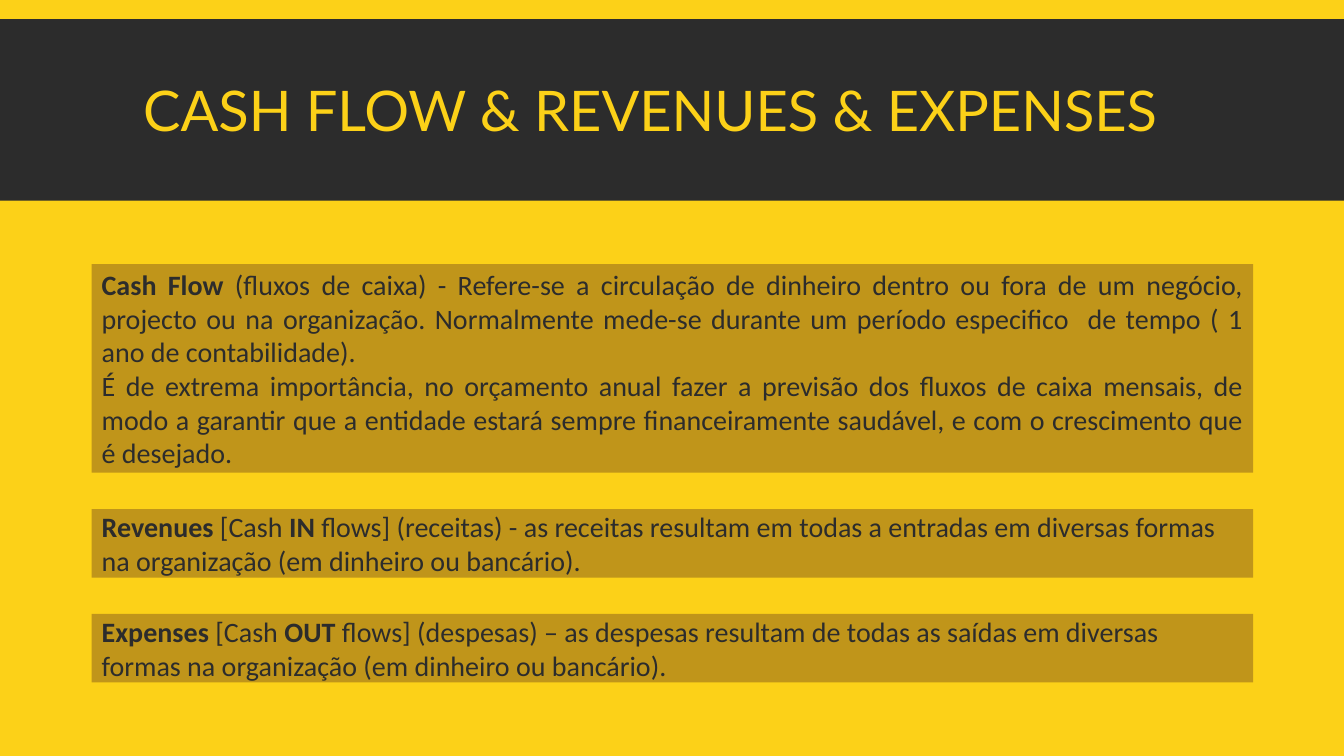
from pptx import Presentation
from pptx.dml.color import RGBColor
from pptx.enum.shapes import MSO_SHAPE as Shape
from pptx.enum.text import MSO_ANCHOR as Anchor, MSO_AUTO_SIZE as AutoSize, PP_ALIGN as Align
from pptx.util import Inches, Pt

YELLOW = RGBColor(0xFC, 0xD1, 0x18)
DARK = RGBColor(0x2C, 0x2C, 0x2C)
OCHRE = RGBColor(0xC0, 0x95, 0x1A)


def add_box(slide, left, top, width, height, color):
    shape = slide.shapes.add_shape(
        Shape.RECTANGLE, Inches(left), Inches(top), Inches(width), Inches(height))
    shape.shadow.inherit = False
    shape.fill.solid()
    shape.fill.fore_color.rgb = color
    shape.line.fill.background()
    return shape


def add_run(paragraph, text, font_name, size, color, bold=False):
    run = paragraph.add_run()
    run.text = text
    run.font.name = font_name
    run.font.size = Pt(size)
    run.font.bold = bold
    run.font.color.rgb = color


presentation = Presentation()
presentation.slide_width = Inches(13.33)
presentation.slide_height = Inches(7.5)
slide = presentation.slides.add_slide(presentation.slide_layouts[5])
slide.background.fill.solid()
slide.background.fill.fore_color.rgb = YELLOW

# Dark header band, sent behind the title
band = add_box(slide, 0, 0.19, 13.33, 1.8, DARK)
title = slide.shapes.title
title._element.addprevious(band._element)

# Title
title.left, title.top = Inches(1.32), Inches(0.31)
title.width, title.height = Inches(10.7), Inches(1.65)
title_frame = title.text_frame
title_frame.auto_size = AutoSize.NONE
title_frame.vertical_anchor = Anchor.MIDDLE
heading = title_frame.paragraphs[0]
heading.alignment = Align.LEFT
heading.line_spacing = 0.85
add_run(heading, "CASH FLOW & REVENUES & EXPENSES", "Lato", 40, YELLOW)

# Definition boxes: top, height, alignment, paragraphs of (text, bold) runs
definitions = [
    (2.62, 2.07, Align.JUSTIFY, [
        [("Cash Flow", True),
         (" (fluxos de caixa) - Refere-se a circulação de dinheiro dentro ou fora de um "
          "negócio, projecto ou na organização. Normalmente mede-se durante um período "
          "especifico  de tempo ( 1 ano de contabilidade).", False)],
        [("É de extrema importância, no orçamento anual fazer a previsão dos fluxos de "
          "caixa mensais, de modo a garantir que a entidade estará sempre financeiramente "
          "saudável, e com o crescimento que é desejado.", False)],
    ]),
    (5.05, 0.68, Align.LEFT, [
        [("Revenues", True), (" [Cash ", False), ("IN ", True),
         ("flows] (receitas) - as receitas resultam em todas a entradas em diversas "
          "formas na organização (em dinheiro ou bancário).", False)],
    ]),
    (6.09, 0.68, Align.LEFT, [
        [("Expenses", True), (" [Cash ", False), ("OUT ", True),
         ("flows] (despesas) – as despesas resultam de todas as saídas em diversas "
          "formas na organização (em dinheiro ou bancário).", False)],
    ]),
]
for top, height, alignment, paragraphs in definitions:
    box = add_box(slide, 0.91, top, 11.52, height, OCHRE)
    frame = box.text_frame
    frame.word_wrap = True
    frame.vertical_anchor = Anchor.MIDDLE
    for index, runs in enumerate(paragraphs):
        paragraph = frame.add_paragraph() if index else frame.paragraphs[0]
        paragraph.alignment = alignment
        for text, bold in runs:
            add_run(paragraph, text, "Calibri", 20, DARK, bold)

presentation.save("out.pptx")
